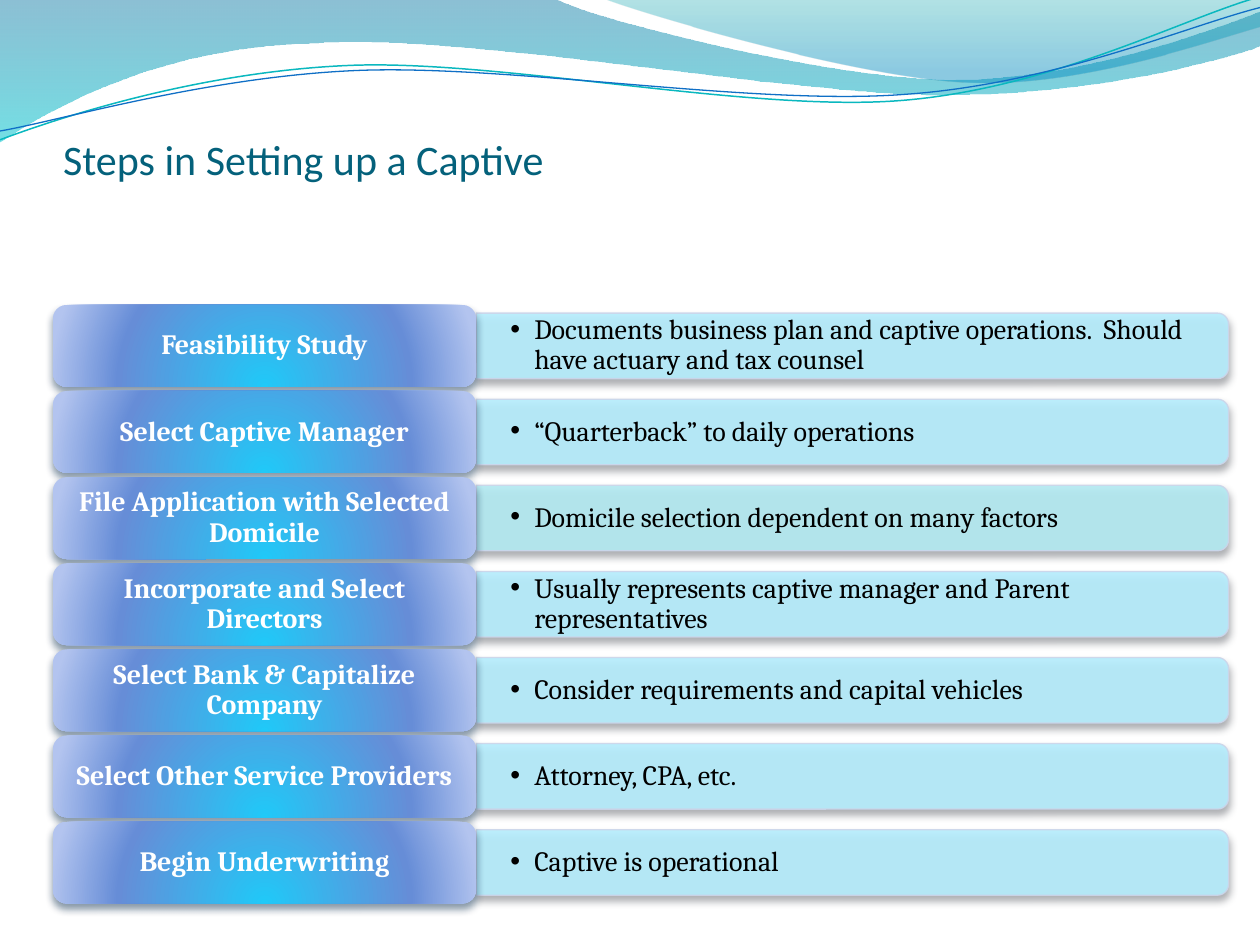
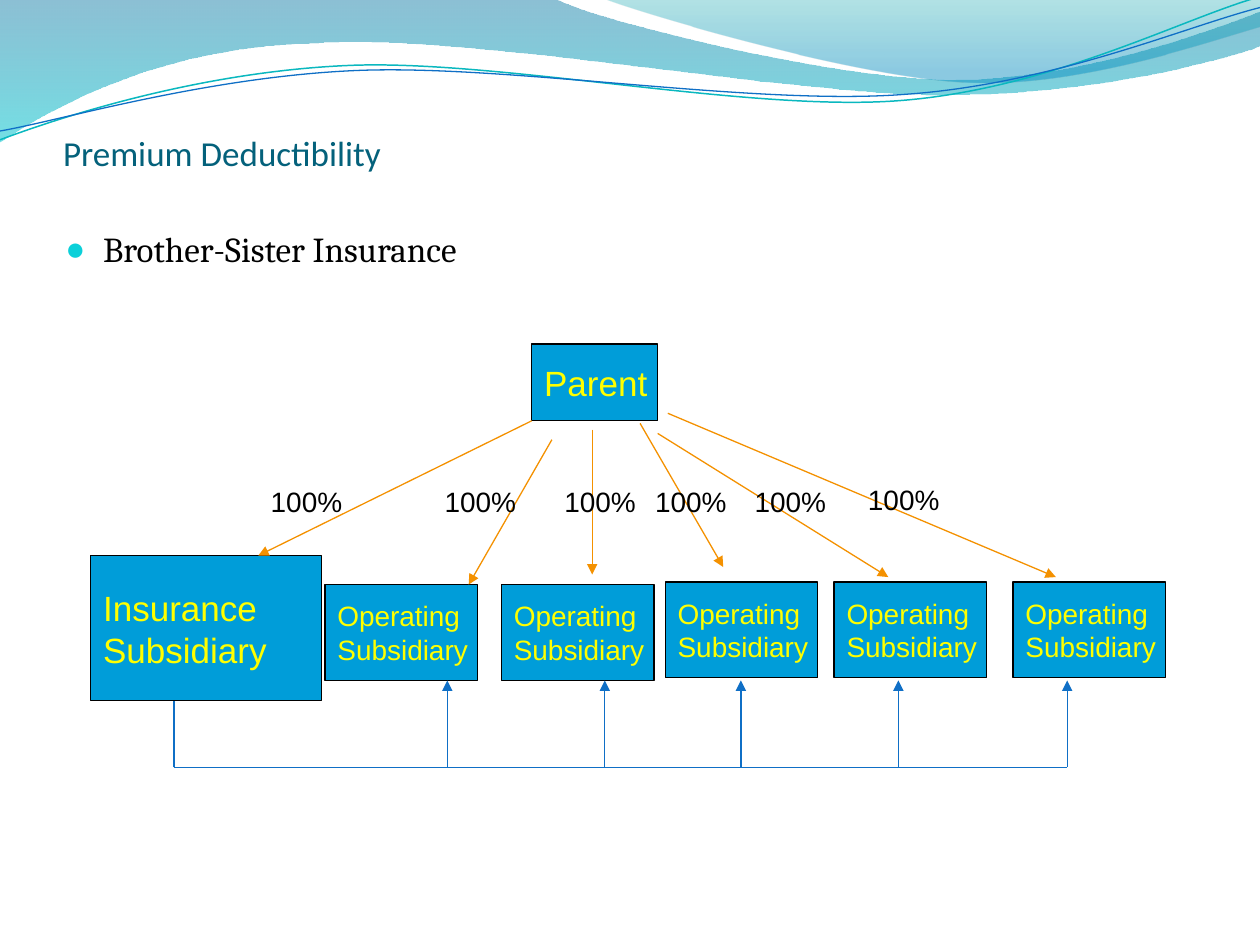
from dataclasses import dataclass

from lxml.etree import SubElement
from pptx import Presentation
from pptx.dml.color import RGBColor
from pptx.enum.shapes import MSO_CONNECTOR, MSO_SHAPE
from pptx.enum.text import MSO_ANCHOR as Anchor, PP_ALIGN as Align
from pptx.oxml import parse_xml
from pptx.oxml.ns import nsdecls, qn
from pptx.util import Inches, Pt

BLACK = RGBColor(0x00, 0x00, 0x00)
WHITE = RGBColor(0xFF, 0xFF, 0xFF)
YELLOW = RGBColor(0xFF, 0xFF, 0x00)
ORANGE = RGBColor(0xF4, 0x91, 0x00)
BLUE = RGBColor(0x0F, 0x6F, 0xC6)
BOX_BLUE = RGBColor(0x00, 0x9D, 0xD9)
TITLE_TEAL = RGBColor(0x04, 0x61, 0x7B)
BULLET_TEAL = RGBColor(0x0B, 0xD0, 0xD9)
WAVE_TEAL = RGBColor(0x0A, 0xB8, 0xBF)
BAR_BLUE = RGBColor(0xB5, 0xED, 0xFD)
BAR_GREEN = RGBColor(0xB3, 0xEA, 0xF2)
BAR_EDGE = RGBColor(0xCC, 0xD5, 0xEA)
BAR_SHADOW = RGBColor(0x47, 0x4B, 0x53)
LABEL_SHADOW = RGBColor(0x04, 0x27, 0x47)

# Gradient stops: position %, colour, opacity %
WAVE_STOPS = [(0, RGBColor(0x00, 0x74, 0xA1), 45), (100, RGBColor(0x00, 0xC6, 0xCF), 55)]
CREST_STOPS = [(0, RGBColor(0x00, 0xA1, 0xA9), 30), (80, RGBColor(0x00, 0x8B, 0xBF), 45)]
LABEL_STOPS = [(0, RGBColor(0x20, 0xC9, 0xF8), 100), (68, RGBColor(0x66, 0x8D, 0xD7), 100),
               (100, RGBColor(0xB3, 0xC4, 0xEF), 100)]
DOWNWARD = '<a:lin ang="5400000" scaled="1"/>'
FROM_BELOW = '<a:path path="circle"><a:fillToRect l="50000" t="130000" r="50000" b="-30000"/></a:path>'

# Outlines in inches: pairs are straight segments, sextets are Bézier curves
WAVE = [(0, 0), (4.4, -0.01), (4.76, 0.17, 6.64, 0.63, 7.58, 0.63),
        (8.53, 0.63, 9.58, 0.26, 10, 0.09), (10.01, 0.36),
        (9.83, 0.44, 8.7, 0.76, 7.46, 0.75), (6.22, 0.75, 3.82, 0.28, 2.57, 0.34),
        (1.29, 0.36, 0.46, 0.83, -0.01, 1.13)]
CREST = [(4.79, -0.01), (5.09, 0.11, 6.82, 0.62, 7.69, 0.65),
         (8.56, 0.69, 9.61, 0.32, 10, 0.21), (10, 0)]
TEAL_RIPPLE = [(0, 1.11), (0.48, 0.93, 1.58, 0.57, 2.77, 0.52),
               (3.95, 0.47, 5.93, 0.89, 7.13, 0.8), (8.33, 0.71, 9.38, 0.15, 9.98, -0.02)]
BLUE_RIPPLE = [(0, 1.04), (0.47, 0.96, 1.64, 0.61, 2.83, 0.56),
               (4.03, 0.51, 5.97, 0.84, 7.17, 0.75), (8.36, 0.67, 9.41, 0.21, 10, 0.06)]

STEPS = [
    ("Feasibility Study",
     "Documents business plan and captive operations.  Should have actuary and tax counsel", BAR_BLUE),
    ("Select Captive Manager", "“Quarterback” to daily operations", BAR_BLUE),
    ("File Application with Selected Domicile",
     "Domicile selection dependent on many factors", BAR_GREEN),
    ("Incorporate and Select Directors",
     "Usually represents captive manager and Parent representatives", BAR_BLUE),
    ("Select Bank & Capitalize Company", "Consider requirements and capital vehicles", BAR_BLUE),
    ("Select Other Service Providers", "Attorney, CPA, etc.", BAR_BLUE),
    ("Begin Underwriting", "Captive is operational", BAR_BLUE),
]

# Within the ownership chart: box left and top, arrow start and end, share left and top, riser x
OPERATING = [
    ((1.86, 1.91), (3.66, 0.76), (3.0, 1.91), (2.71, 1.07), 2.83),
    ((3.26, 1.91), (3.98, 0.68), (3.98, 1.83), (3.66, 1.07), 4.08),
    ((4.56, 1.89), (4.36, 0.63), (5.02, 1.77), (4.38, 1.07), 5.16),
    ((5.9, 1.89), (4.5, 0.71), (6.33, 1.85), (5.17, 1.07), 6.41),
    ((7.32, 1.89), (4.58, 0.55), (7.66, 1.85), (6.07, 1.05), 7.75),
]


@dataclass
class Box:
    """A region of the slide, in inches."""
    left: float
    top: float
    width: float
    height: float

    def emu(self):
        return [Inches(v) for v in (self.left, self.top, self.width, self.height)]

    def inner(self, left, top, width, height):
        return Box(self.left + left, self.top + top, width, height)

    def point(self, x, y):
        return Inches(self.left + x), Inches(self.top + y)


def apply(target, formats):
    for name, value in formats.items():
        setattr(target, name, value)


def write(shape, text, frame=None, font=None, paragraph=None):
    apply(shape.text_frame, frame or {})
    shape.text_frame.text = text
    for line in shape.text_frame.paragraphs:
        apply(line, paragraph or {})
        for run in line.runs:
            color = font["color"]
            apply(run.font, {k: v for k, v in font.items() if k != "color"})
            run.font.color.rgb = color


def add_bullet(paragraph, char, indent, color=None, percent=100):
    props = paragraph._p.get_or_add_pPr()
    props.set("marL", str(Inches(indent)))
    props.set("indent", str(-Inches(indent)))
    if color is not None:
        SubElement(SubElement(props, qn("a:buClr")), qn("a:srgbClr"), val=str(color))
    SubElement(props, qn("a:buSzPct"), val=str(percent * 1000))
    SubElement(props, qn("a:buFont"), typeface="Arial")
    SubElement(props, qn("a:buChar"), char=char)


def fill_gradient(shape, stops, direction):
    shape.fill.gradient()
    marks = "".join(
        f'<a:gs pos="{pos * 1000}"><a:srgbClr val="{color}"><a:alpha val="{alpha * 1000}"/></a:srgbClr></a:gs>'
        for pos, color, alpha in stops)
    props = shape.element.spPr
    props.replace(props.find(qn("a:gradFill")), parse_xml(
        f'<a:gradFill {nsdecls("a")} rotWithShape="1"><a:gsLst>{marks}</a:gsLst>{direction}</a:gradFill>'))


def add_shadow(shape, color):
    shape.shadow.inherit = False
    effects = shape.element.spPr.find(qn("a:effectLst"))
    effects.append(parse_xml(
        f'<a:outerShdw {nsdecls("a")} blurRad="{Pt(4.5)}" dist="{Pt(3)}" dir="5400000" rotWithShape="0">'
        f'<a:srgbClr val="{color}"><a:alpha val="48000"/></a:srgbClr></a:outerShdw>'))


def draw_outline(slide, outline, close):
    """Build the outline through all its knots, then join each sextet into one curve."""
    knots = [(Inches(x), Inches(y)) for segment in outline
             for x, y in zip(segment[::2], segment[1::2])]
    builder = slide.shapes.build_freeform(*knots[0])
    builder.add_line_segments(knots[1:], close=close)
    shape = builder.convert_to_shape()
    shape.shadow.inherit = False

    strokes = iter(list(shape.element.spPr.iter(qn("a:lnTo"))))
    for segment in outline[1:]:
        first, *others = [next(strokes) for _ in segment[::2]]
        if others:
            curve = parse_xml(f'<a:cubicBezTo {nsdecls("a")}/>')
            first.getparent().replace(first, curve)
            for stroke in (first, *others):
                curve.append(stroke[0])
            for stroke in others:
                stroke.getparent().remove(stroke)
    return shape


def move_waves_to_layout(slide):
    """Draw the wave band and hand it to the layout, so every slide shows it."""
    band = []
    for outline, stops in ((WAVE, WAVE_STOPS), (CREST, CREST_STOPS)):
        wave = draw_outline(slide, outline, True)
        fill_gradient(wave, stops, DOWNWARD)
        wave.line.fill.background()
        band.append(wave)
    for outline, color, width in ((TEAL_RIPPLE, WAVE_TEAL, 0.85), (BLUE_RIPPLE, BLUE, 0.75)):
        ripple = draw_outline(slide, outline, False)
        ripple.fill.background()
        ripple.line.color.rgb = color
        ripple.line.width = Pt(width)
        band.append(ripple)
    layout_tree = slide.slide_layout.shapes.element
    for order, part in enumerate(band):
        part.element.nvSpPr.cNvPr.set("id", str(100 + order))
        layout_tree.insert(2 + order, part.element)


def set_title(slide, text, box, size):
    title = slide.shapes.title
    apply(title, dict(zip(("left", "top", "width", "height"), box.emu())))
    write(title, text,
          {"vertical_anchor": Anchor.BOTTOM, "margin_left": 0, "margin_right": 0,
           "margin_top": Inches(0.05), "margin_bottom": 0},
          {"name": "Calibri", "size": Pt(size), "color": TITLE_TEAL}, {"alignment": Align.LEFT})


def add_step(slide, box, name, detail, bar_color):
    label_width, bar_height = 3.36, 0.52
    bar_width = box.width - label_width
    # The bar stands upright and is turned so that its rounded end faces right
    bar = slide.shapes.add_shape(MSO_SHAPE.ROUND_2_SAME_RECTANGLE, *box.inner(
        label_width + (bar_width - bar_height) / 2, (box.height - bar_width) / 2,
        bar_height, bar_width).emu())
    bar.rotation = 90
    bar.fill.solid()
    bar.fill.fore_color.rgb = bar_color
    bar.line.color.rgb = BAR_EDGE
    bar.line.width = Pt(0.75)
    for color in bar.element.spPr.iter(qn("a:srgbClr")):
        SubElement(color, qn("a:alpha"), val="90000")
    add_shadow(bar, BAR_SHADOW)

    note = slide.shapes.add_textbox(*box.inner(label_width, 0.09, bar_width - 0.02, 0.47).emu())
    write(note, detail,
          {"word_wrap": True, "vertical_anchor": Anchor.MIDDLE,
           "margin_left": Inches(0.27), "margin_right": Inches(0.27),
           "margin_top": Inches(0.14), "margin_bottom": Inches(0.14)},
          {"name": "Cambria", "size": Pt(16), "color": BLACK}, {"line_spacing": 0.9})
    add_bullet(note.text_frame.paragraphs[0], "•", 0.19)

    label = slide.shapes.add_shape(
        MSO_SHAPE.ROUNDED_RECTANGLE, *box.inner(0, 0, label_width, box.height).emu())
    fill_gradient(label, LABEL_STOPS, FROM_BELOW)
    label.line.fill.background()
    add_shadow(label, LABEL_SHADOW)
    write(label, name,
          {"word_wrap": True, "vertical_anchor": Anchor.MIDDLE,
           "margin_left": Inches(0.07), "margin_right": Inches(0.07),
           "margin_top": Inches(0.03), "margin_bottom": Inches(0.03)},
          {"name": "Cambria", "size": Pt(16), "bold": True, "color": WHITE},
          {"alignment": Align.CENTER, "line_spacing": 0.9})


def add_step_list(slide, box):
    row_height = 0.65
    pitch = (box.height - row_height) / (len(STEPS) - 1)
    for row, step in enumerate(STEPS):
        add_step(slide, box.inner(0, row * pitch, box.width, row_height), *step)


def add_company(slide, box, text, size):
    company = slide.shapes.add_shape(MSO_SHAPE.RECTANGLE, *box.emu())
    company.shadow.inherit = False
    company.fill.solid()
    company.fill.fore_color.rgb = BOX_BLUE
    company.line.color.rgb = BLACK
    company.line.width = Pt(0.75)
    write(company, text, {"word_wrap": False, "vertical_anchor": Anchor.MIDDLE},
          {"name": "Arial", "size": Pt(size), "color": YELLOW}, {"alignment": Align.LEFT})


def add_link(slide, start, end, color, arrow=True):
    link = slide.shapes.add_connector(MSO_CONNECTOR.STRAIGHT, *start, *end)
    link.line.color.rgb = color
    link.line.width = Pt(0.75)
    if arrow:
        SubElement(link.line._get_or_add_ln(), qn("a:tailEnd"), type="triangle")
    SubElement(link.element.spPr, qn("a:effectLst"))


def add_ownership(slide, box, start, end, share_at):
    add_link(slide, box.point(*start), box.point(*end), ORANGE)
    share = slide.shapes.add_textbox(*box.inner(*share_at, 0.78, 0.37).emu())
    write(share, "100%", {"word_wrap": False}, {"name": "Arial", "size": Pt(16), "color": BLACK})


def add_ownership_chart(slide, box):
    add_company(slide, box.inner(3.5, 0, 1, 0.61), "Parent", 20)
    add_company(slide, box.inner(0, 1.68, 1.83, 1.15), "Insurance\nSubsidiary", 20)
    add_ownership(slide, box, (3.5, 0.61), (1.33, 1.68), (1.33, 1.07))

    insurance_x, rail_y = 0.66, box.height
    add_link(slide, box.point(insurance_x, rail_y), box.point(insurance_x, 2.83), BLUE, arrow=False)
    add_link(slide, box.point(insurance_x, rail_y), box.point(OPERATING[-1][-1], rail_y), BLUE, arrow=False)
    for company_at, start, end, share_at, riser_x in OPERATING:
        add_company(slide, box.inner(*company_at, 1.21, 0.76), "Operating\nSubsidiary", 16)
        add_ownership(slide, box, start, end, share_at)
        add_link(slide, box.point(riser_x, rail_y), box.point(riser_x, 2.67), BLUE)


def add_topic(slide, box, text):
    topic = slide.shapes.add_textbox(*box.emu())
    write(topic, text, {"word_wrap": True},
          {"name": "Cambria", "size": Pt(20), "color": BLACK}, {"space_before": Pt(4)})
    add_bullet(topic.text_frame.paragraphs[0], "●", 0.3, BULLET_TEAL, 95)


def main():
    deck = Presentation()
    deck.slide_width, deck.slide_height = Inches(10), Inches(7.5)
    title_only = deck.slide_layouts[5]

    setup = deck.slides.add_slide(title_only)
    move_waves_to_layout(setup)
    set_title(setup, "Steps in Setting up a Captive", Box(0.5, 0.21, 9, 1.25), 24)
    add_step_list(setup, Box(0.42, 2.42, 9.33, 4.75))

    premium = deck.slides.add_slide(title_only)
    set_title(premium, "Premium Deductibility", Box(0.5, 0.13, 9, 1.25), 20)
    add_topic(premium, Box(0.42, 1.76, 9, 4.8), "Brother-Sister Insurance")
    add_ownership_chart(premium, Box(0.72, 2.73, 8.53, 3.36))

    deck.save("out.pptx")


if __name__ == "__main__":
    main()
